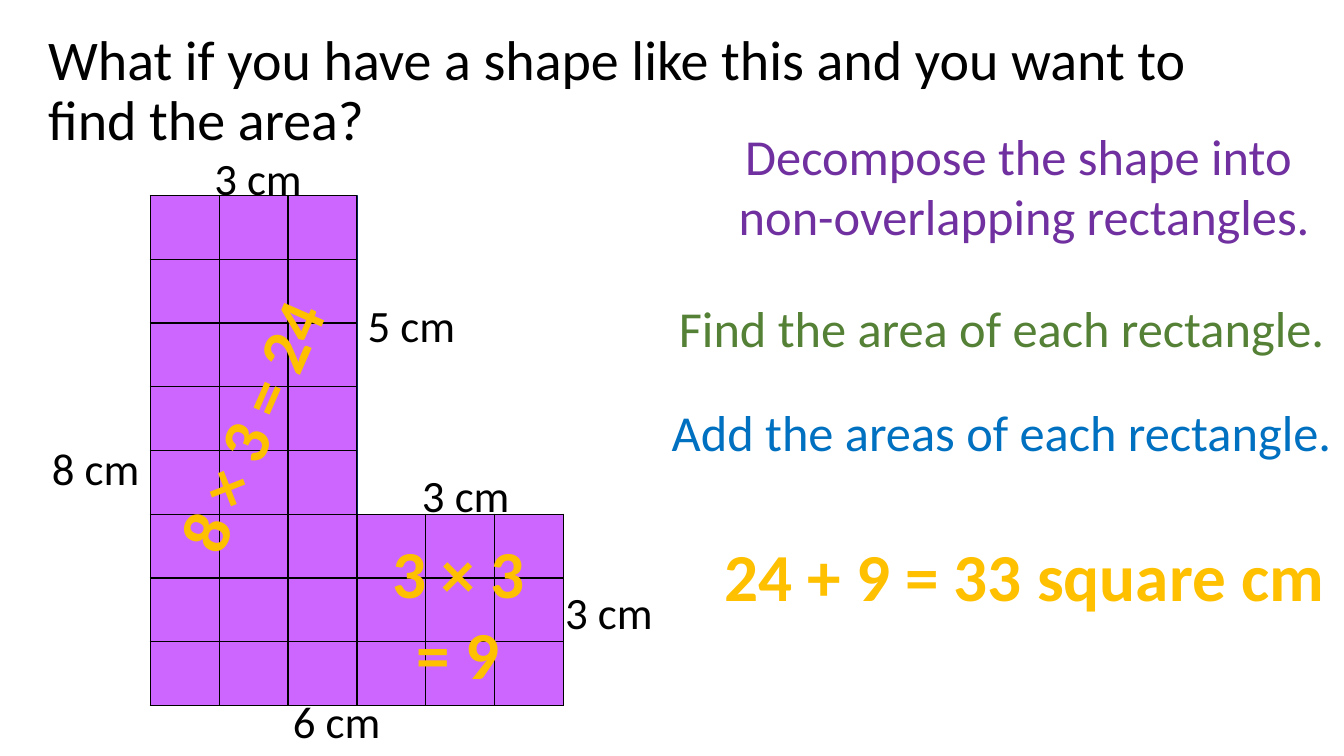
import dataclasses

import lxml.etree
import pptx
import pptx.dml.color
import pptx.enum.text
import pptx.oxml.ns
import pptx.util

Inches = pptx.util.Inches
Pt = pptx.util.Pt
PP_ALIGN = pptx.enum.text.PP_ALIGN


@dataclasses.dataclass(frozen=True)
class Theme:
    """Colours, font and type sizes of the slide."""
    font: str = "Calibri"
    ink: str = "000000"
    figure: str = "CC66FF"
    outline: str = "002060"
    decompose: str = "7030A0"
    find: str = "548135"
    add: str = "0070C0"
    answer: str = "FFC000"
    title_size: int = 40
    step_size: int = 36
    label_size: int = 32
    answer_size: int = 48


THEME = Theme()


def rgb(value):
    """Turn a hex string into a colour."""
    return pptx.dml.color.RGBColor.from_string(value)


def place_text(slide, box, text, size, colour, bold=False, align=PP_ALIGN.CENTER):
    """Place wrapped text in a box and return its shape."""
    caption = slide.shapes.add_textbox(*map(Inches, box))
    frame = caption.text_frame
    frame.word_wrap = True
    frame.text = text
    for paragraph in frame.paragraphs:
        paragraph.alignment = align
        for run in paragraph.runs:
            run.font.name = THEME.font
            run.font.size = Pt(size)
            run.font.bold = bold
            run.font.color.rgb = rgb(colour)
    return caption


def rule_cell(cell):
    """Give a cell thin borders on all sides and no fill."""
    properties = cell._tc.get_or_add_tcPr()
    qn = pptx.oxml.ns.qn
    for side in ("a:lnL", "a:lnR", "a:lnT", "a:lnB"):
        border = lxml.etree.SubElement(properties, qn(side), w=str(Pt(1)))
        fill = lxml.etree.SubElement(border, qn("a:solidFill"))
        lxml.etree.SubElement(fill, qn("a:srgbClr"), val=THEME.ink)
    cell.fill.background()


def draw_grid(slide, box, rows, columns):
    """Rule a box into equal transparent unit squares."""
    left, top, width, height = box
    grid = slide.shapes.add_table(rows, columns, *map(Inches, box)).table
    grid.first_row = False
    grid.horz_banding = False
    for column in grid.columns:
        column.width = Inches(width / columns)
    for row in grid.rows:
        row.height = Inches(height / rows)
    for cell in grid.iter_cells():
        rule_cell(cell)


def draw_title(slide, box):
    """Ask the opening question."""
    title = place_text(
        slide, box,
        "What if you have a shape like this and you want to find the area?",
        THEME.title_size, THEME.ink, align=PP_ALIGN.LEFT)
    title.text_frame.vertical_anchor = pptx.enum.text.MSO_ANCHOR.MIDDLE
    title.text_frame.paragraphs[0].line_spacing = 0.9


def draw_figure(slide, box):
    """Draw the L-shaped figure with its grids, side lengths and products."""
    left, top, width, height = box
    half = width / 2
    foot = height * 3 / 8
    foot_top = top + height - foot
    middle, right, bottom = left + half, left + width, top + height

    outline = slide.shapes.build_freeform(Inches(left), Inches(top))
    corners = ((middle, top), (middle, foot_top), (right, foot_top),
               (right, bottom), (left, bottom))
    outline.add_line_segments([(Inches(x), Inches(y)) for x, y in corners])
    figure = outline.convert_to_shape()
    figure.shadow.inherit = False
    figure.fill.solid()
    figure.fill.fore_color.rgb = rgb(THEME.figure)
    figure.line.color.rgb = rgb(THEME.outline)
    figure.line.width = Pt(1)

    draw_grid(slide, (left, top, half, height), 8, 3)
    draw_grid(slide, (middle, foot_top, half, foot), 3, 3)

    side_lengths = (
        ("8 cm", -1.08, 2.38),
        ("6 cm", 1.31, 4.89),
        ("3 cm", 0.53, -0.49),
        ("5 cm", 2.05, 0.96),
        ("3 cm", 2.59, 2.65),
        ("3 cm", 4.01, 3.81),
    )
    for length, across, down in side_lengths:
        place_text(slide, (left + across, top + down, 1.08, 0.64), length,
                   THEME.label_size, THEME.ink)

    tall_product = place_text(
        slide, (left - 0.48, top + 1.76, 3, 0.91), "8 × 3 = 24 ",
        THEME.answer_size, THEME.answer, bold=True)
    tall_product.rotation = 293.6
    place_text(slide, (left + 2.29, foot_top + 0.12, 1.68, 1.72),
               "3 × 3 \v= 9 ", THEME.answer_size, THEME.answer, bold=True)


def draw_steps(slide, box):
    """List the three steps and the total in the right-hand column."""
    left, top, width, height = box
    steps = (
        ("Decompose the shape into \nnon-overlapping rectangles.",
         0.6, 0, 6.06, 1.31, THEME.decompose),
        ("Find the area of each rectangle.", 0, 1.71, width, 0.71, THEME.find),
        ("Add the areas of each rectangle.", 0, 2.74, width, 0.71, THEME.add),
    )
    for step, across, down, step_width, step_height, colour in steps:
        place_text(slide, (left + across, top + down, step_width, step_height),
                   step, THEME.step_size, colour)
    place_text(slide, (left + 0.52, top + height - 0.91, 6.22, 0.91),
               "24 + 9 = 33 square cm", THEME.answer_size, THEME.answer, bold=True)


def main():
    """Build the slide and save it."""
    deck = pptx.Presentation()
    deck.slide_width = Inches(13.33)
    deck.slide_height = Inches(7.5)
    slide = deck.slides.add_slide(deck.slide_layouts[6])
    draw_title(slide, (0.38, 0.19, 11.5, 1.45))
    draw_figure(slide, (1.49, 1.94, 4.1, 5.06))
    draw_steps(slide, (6.53, 1.19, 6.81, 4.97))
    deck.save("out.pptx")


if __name__ == "__main__":
    main()
